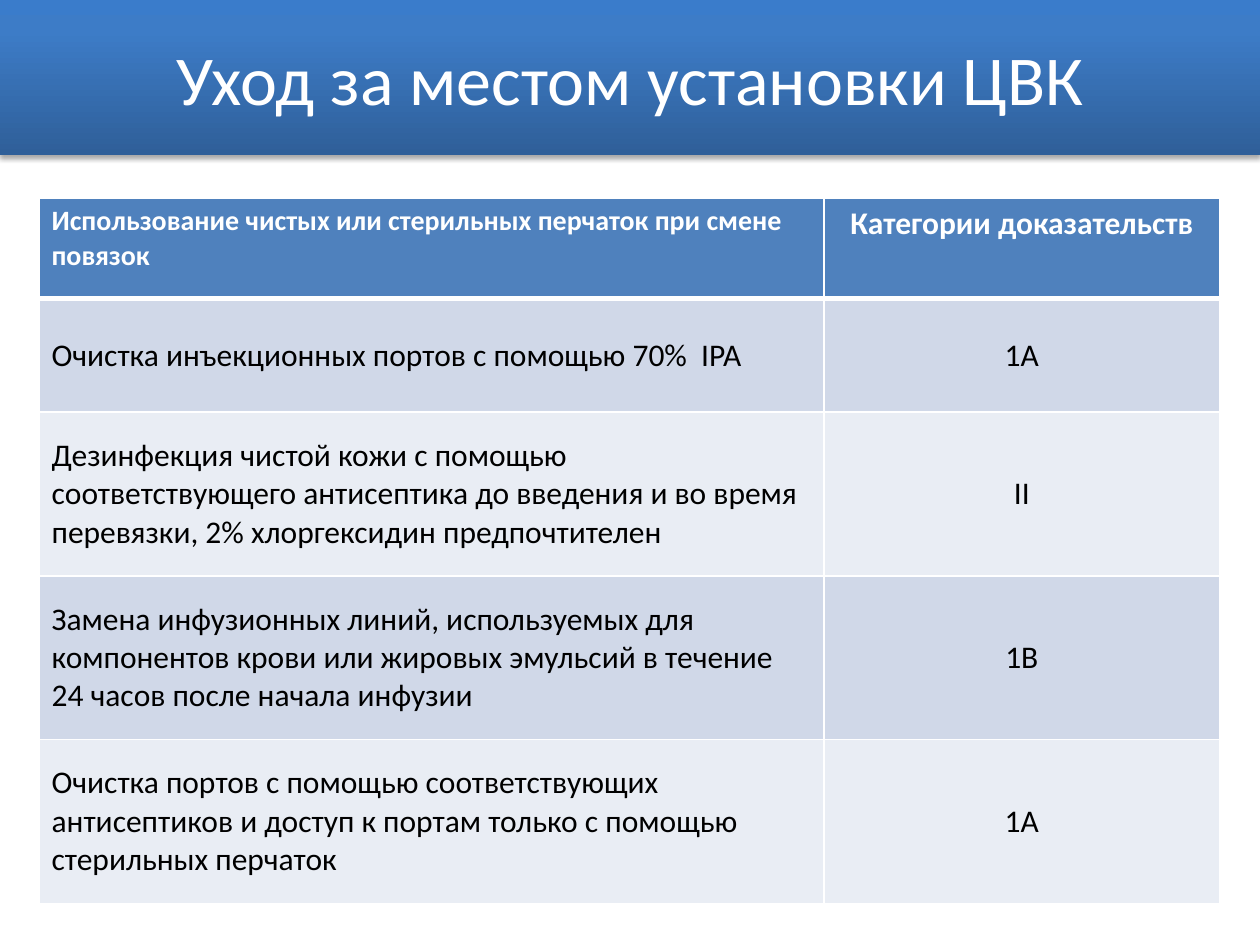
import pptx
import pptx.dml.color
import pptx.enum.shapes
import pptx.enum.text
import pptx.oxml
import pptx.oxml.ns
import pptx.util

INCH = pptx.util.Inches(1)
CENTER = pptx.enum.text.PP_ALIGN.CENTER
LEFT = pptx.enum.text.PP_ALIGN.LEFT
MIDDLE = pptx.enum.text.MSO_ANCHOR.MIDDLE
TOP = pptx.enum.text.MSO_ANCHOR.TOP
NAMESPACE = pptx.oxml.ns.nsdecls("a")


def color(value):
    return pptx.dml.color.RGBColor.from_string(value)


def write(frame, text, size, shade, align, bold=False):
    para = frame.paragraphs[0]
    para.alignment = align
    span = para.add_run()
    span.text = text
    span.font.name = "Calibri"
    span.font.size = pptx.util.Pt(size)
    span.font.bold = bold
    span.font.color.rgb = color(shade)


deck = pptx.Presentation()
deck.slide_width = 10 * INCH
deck.slide_height = int(7.5 * INCH)
page = deck.slides.add_slide(deck.slide_layouts[6])

# Title banner with a vertical gradient and a soft shadow
banner = page.shapes.add_shape(
    pptx.enum.shapes.MSO_SHAPE.RECTANGLE, 0, 0, deck.slide_width, int(1.23 * INCH))
banner.line.fill.background()
banner.shadow.inherit = False
banner.fill.gradient()
banner.fill.gradient_angle = 90
stops = banner.element.spPr.find(".//" + pptx.oxml.ns.qn("a:gsLst"))
for stop in list(stops):
    stops.remove(stop)
for position, shade in ((0, "2F5F99"), (80, "3D7CC7"), (100, "3A7CCB")):
    stops.append(pptx.oxml.parse_xml(
        f'<a:gs {NAMESPACE} pos="{position * 1000}"><a:srgbClr val="{shade}"/></a:gs>'))
effects = banner.element.spPr.find(pptx.oxml.ns.qn("a:effectLst"))
effects.append(pptx.oxml.parse_xml(
    f'<a:outerShdw {NAMESPACE} blurRad="{pptx.util.Pt(3.1)}" dist="{pptx.util.Pt(1.8)}" '
    'dir="5400000" rotWithShape="0"><a:srgbClr val="000000"><a:alpha val="35000"/>'
    '</a:srgbClr></a:outerShdw>'))
banner.text_frame.word_wrap = True
banner.text_frame.vertical_anchor = MIDDLE
write(banner.text_frame, "Уход за местом установки ЦВК", 40, "FFFFFF", CENTER)

# Care measures and their evidence categories
rows = [
    ("Использование чистых или стерильных перчаток при смене повязок",
     "Категории доказательств"),
    ("Очистка инъекционных портов с помощью 70%  IPA", "1А"),
    ("Дезинфекция чистой кожи с помощью соответствующего антисептика до введения "
     "и во время перевязки, 2% хлоргексидин предпочтителен", "II"),
    ("Замена инфузионных линий, используемых для компонентов крови или жировых "
     "эмульсий в течение 24 часов после начала инфузии", "1В"),
    ("Очистка портов с помощью соответствующих антисептиков и доступ к портам "
     "только с помощью стерильных перчаток", "1А"),
]
widths = (6.23, 3.14)
heights = (0.8, 0.9, 1.3, 1.3, 1.3)
table = page.shapes.add_table(
    len(rows), len(widths), int(0.31 * INCH), int(1.57 * INCH),
    int(sum(widths) * INCH), int(sum(heights) * INCH)).table
for column, width in zip(table.columns, widths):
    column.width = int(width * INCH)

for row_index, texts in enumerate(rows):
    table.rows[row_index].height = int(heights[row_index] * INCH)
    header = row_index == 0
    for column_index, text in enumerate(texts):
        cell = table.cell(row_index, column_index)
        edges = {"lnL": 1, "lnR": 1, "lnT": 3 if row_index == 1 else 1,
                 "lnB": 3 if header else 1}
        for edge, weight in edges.items():
            cell._tc.get_or_add_tcPr().append(pptx.oxml.parse_xml(
                f'<a:{edge} {NAMESPACE} w="{pptx.util.Pt(weight)}"><a:solidFill>'
                f'<a:srgbClr val="FFFFFF"/></a:solidFill></a:{edge}>'))
        cell.fill.solid()
        cell.fill.fore_color.rgb = color(
            "4F81BD" if header else ("E9EDF4", "D0D8E8")[row_index % 2])
        cell.vertical_anchor = TOP if header else MIDDLE
        write(cell.text_frame, text,
              16 if header and column_index == 0 else 18,
              "FFFFFF" if header else "000000",
              CENTER if column_index else LEFT, bold=header)

deck.save("out.pptx")
